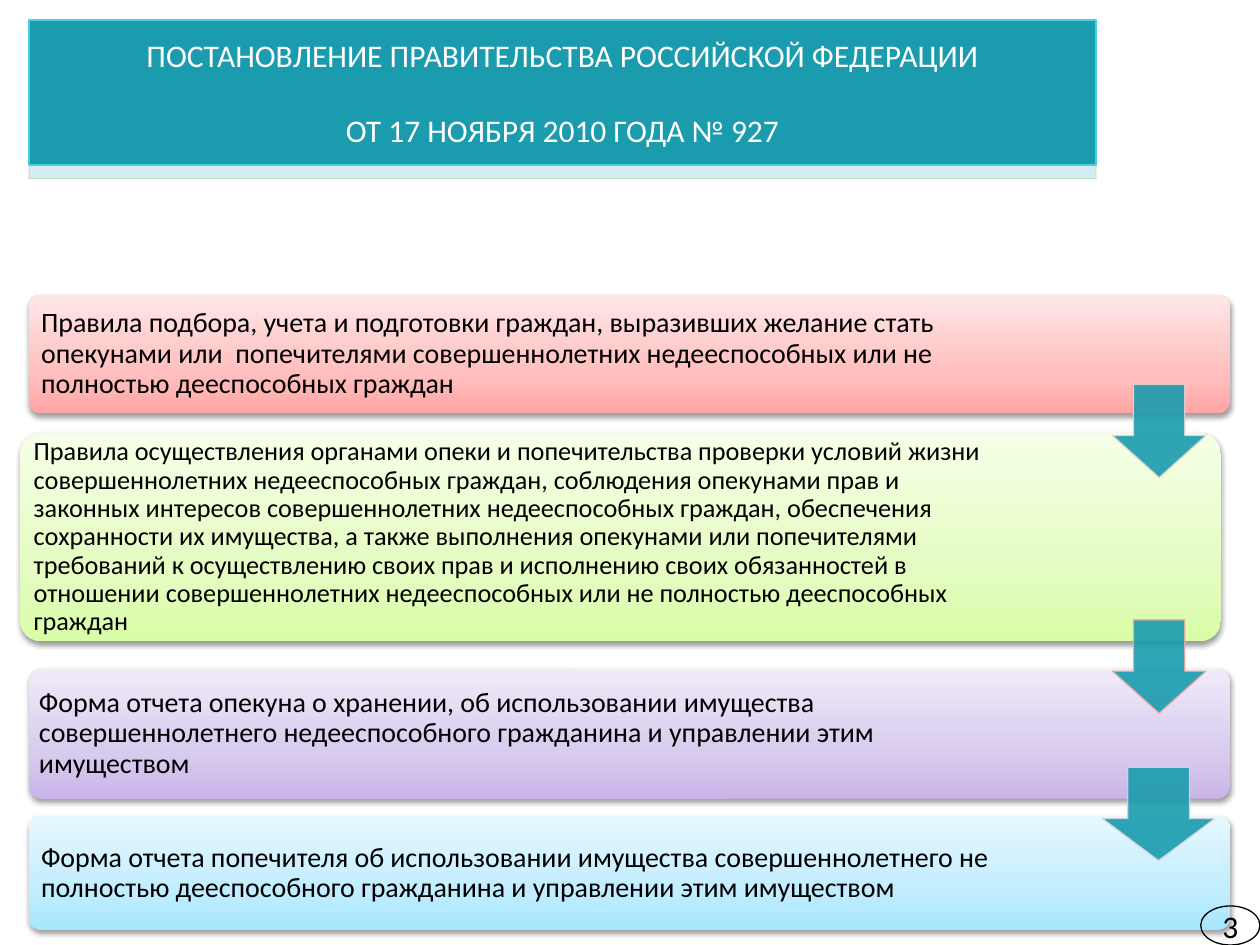
from dataclasses import dataclass
from typing import Optional

from lxml.etree import SubElement
from pptx import Presentation
from pptx.dml.color import RGBColor
from pptx.enum.shapes import MSO_SHAPE as Shape
from pptx.enum.text import MSO_ANCHOR as Anchor, PP_ALIGN as Align
from pptx.oxml import parse_xml
from pptx.oxml.ns import nsdecls, qn
from pptx.util import Inches, Pt

CELL = 0.1
TEAL = "1A9CAE"
FONT = "Calibri"


@dataclass
class Box:
    """A place on the grid, in columns and rows of one cell."""
    col: float
    row: float
    cols: float
    rows: float


@dataclass
class Card:
    """A gradient card, its stops running from bottom to top."""
    box: Box
    stops: tuple[str, str, str]
    text: str
    size: int
    inset: float
    right: float


@dataclass
class Arrow:
    """A down arrow joining two cards."""
    box: Box
    line: str


CARDS = [
    Card(Box(2.3, 23.4, 95.3, 9.4), ("FFA6A5", "FFC0BF", "FFE7E7"),
         "Правила подбора, учета и подготовки граждан, выразивших желание стать "
         "опекунами или  попечителями совершеннолетних недееспособных или не "
         "полностью дееспособных граждан", 16, 0.7, 16.3),
    Card(Box(1.6, 34.4, 95.3, 16.5), ("DAFDA7", "E4FCC2", "F5FFE7"),
         "Правила осуществления органами опеки и попечительства проверки условий "
         "жизни совершеннолетних недееспособных граждан, соблюдения опекунами прав "
         "и законных интересов совершеннолетних недееспособных граждан, обеспечения "
         "сохранности их имущества, а также выполнения опекунами или попечителями "
         "требований к осуществлению своих прав и исполнению своих обязанностей в "
         "отношении совершеннолетних недееспособных или не полностью дееспособных "
         "граждан", 15, 0.6, 17.9),
    Card(Box(2.3, 53.1, 95.3, 10.3), ("C9B5E8", "D8CBEE", "F0EAF9"),
         "Форма отчета опекуна о хранении, об использовании имущества "
         "совершеннолетнего недееспособного гражданина и управлении этим "
         "имуществом", 16, 0.5, 17.6),
    Card(Box(2.3, 64.8, 95.3, 9), ("A7E6FF", "C1EDFF", "E7F8FF"),
         "Форма отчета попечителя об использовании имущества совершеннолетнего не "
         "полностью дееспособного гражданина и управлении этим имуществом",
         16, 0.7, 17.8),
]
ARROWS = [
    Arrow(Box(88.3, 30.5, 7.4, 7.4), "E8D0D0"),
    Arrow(Box(88.3, 49.2, 7.4, 7.4), "ECA9A2"),
    Arrow(Box(87.5, 60.9, 8.9, 7.4), "D8D3E0"),
]


def cells(n: float) -> int:
    """Return the length of n grid cells."""
    return Inches(n * CELL)


def paint(fill, color: str, alpha: int = 100) -> None:
    """Make a fill solid, with opacity in percent."""
    fill.solid()
    fill.fore_color.rgb = RGBColor.from_string(color)
    if alpha < 100:
        for c in fill._xPr.iter(qn("a:srgbClr")):
            SubElement(c, qn("a:alpha"), val=str(alpha * 1000))


def add_shape(s, kind: Shape, box: Box, *, fill: Optional[str] = None,
              line: Optional[str] = None, alpha: int = 100, line_alpha: int = 100,
              adj: tuple[float, ...] = ()):
    """Add a flat preset shape on the grid."""
    sp = s.shapes.add_shape(kind, *map(cells, (box.col, box.row, box.cols, box.rows)))
    sp.shadow.inherit = False
    for i, value in enumerate(adj):
        sp.adjustments[i] = value
    if line:
        sp.line.width = Pt(0.75)
        paint(sp.line.fill, line, line_alpha)
    else:
        sp.line.fill.background()
    if fill:
        paint(sp.fill, fill, alpha)
    else:
        sp.fill.background()
    return sp


def write(sp, *lines: str, size: int = 18, color: str = "000000",
          align: Align = Align.CENTER, spacing: float = 1.0, gap: float = 0,
          margins: tuple[float, float, float, float] = (1, 0.5, 1, 0.5),
          wrap: bool = True) -> None:
    """Write one paragraph per line, vertically centred in a shape."""
    tf = sp.text_frame
    tf.word_wrap = wrap
    tf.vertical_anchor = Anchor.MIDDLE
    tf.margin_left, tf.margin_top, tf.margin_right, tf.margin_bottom = map(cells, margins)
    for i, text in enumerate(lines):
        p = tf.add_paragraph() if i else tf.paragraphs[0]
        p.alignment, p.line_spacing = align, spacing
        p.space_before = Pt(gap if i else 0)
        r = p.add_run()
        r.text = text
        r.font.name, r.font.size = FONT, Pt(size)
        paint(r.font.fill, color)


def add_card(s, card: Card) -> None:
    """Draw a shaded card with its text."""
    sp = add_shape(s, Shape.ROUNDED_RECTANGLE, card.box, fill=card.stops[0], adj=(0.1,))
    stops = "".join(f'<a:gs pos="{pos}"><a:srgbClr val="{c}"/></a:gs>'
                    for pos, c in zip((0, 35000, 100000), card.stops))
    pr = sp._element.spPr
    pr.replace(pr.find(qn("a:solidFill")), parse_xml(
        f'<a:gradFill {nsdecls("a")} rotWithShape="1"><a:gsLst>{stops}</a:gsLst>'
        '<a:lin ang="16200000" scaled="1"/></a:gradFill>'))
    shadow = SubElement(pr.find(qn("a:effectLst")), qn("a:outerShdw"),
                        blurRad=str(Pt(3.1)), dist=str(Pt(1.6)), dir="5400000",
                        rotWithShape="0")
    SubElement(SubElement(shadow, qn("a:srgbClr"), val="000000"),
               qn("a:alpha"), val="38000")
    write(sp, card.text, size=card.size, align=Align.LEFT, spacing=0.9,
          margins=(card.inset, card.inset, card.right, card.inset))


def main() -> None:
    """Build the slide."""
    prs = Presentation()
    prs.slide_width, prs.slide_height = cells(100), cells(75)
    s = prs.slides.add_slide(prs.slide_layouts[6])
    for card in CARDS:
        add_card(s, card)
    for arrow in ARROWS:
        add_shape(s, Shape.DOWN_ARROW, arrow.box, fill=TEAL, alpha=90,
                  line=arrow.line, line_alpha=90, adj=(0.55, 0.45))
    add_shape(s, Shape.RECTANGLE, Box(2.3, 10.2, 84.7, 4),
              fill=TEAL, alpha=18, line="77933C")
    title = add_shape(s, Shape.RECTANGLE, Box(2.3, 1.6, 84.7, 11.5),
                      fill=TEAL, line="45D0E3")
    write(title, "ПОСТАНОВЛЕНИЕ ПРАВИТЕЛЬСТВА РОССИЙСКОЙ ФЕДЕРАЦИИ",
          "ОТ 17 НОЯБРЯ 2010 ГОДА № 927", color="FFFFFF", gap=21)
    number = add_shape(s, Shape.OVAL, Box(95.3, 71.9, 4.7, 3.1), line="000000")
    write(number, "3", wrap=False)
    prs.save("out.pptx")


if __name__ == "__main__":
    main()
